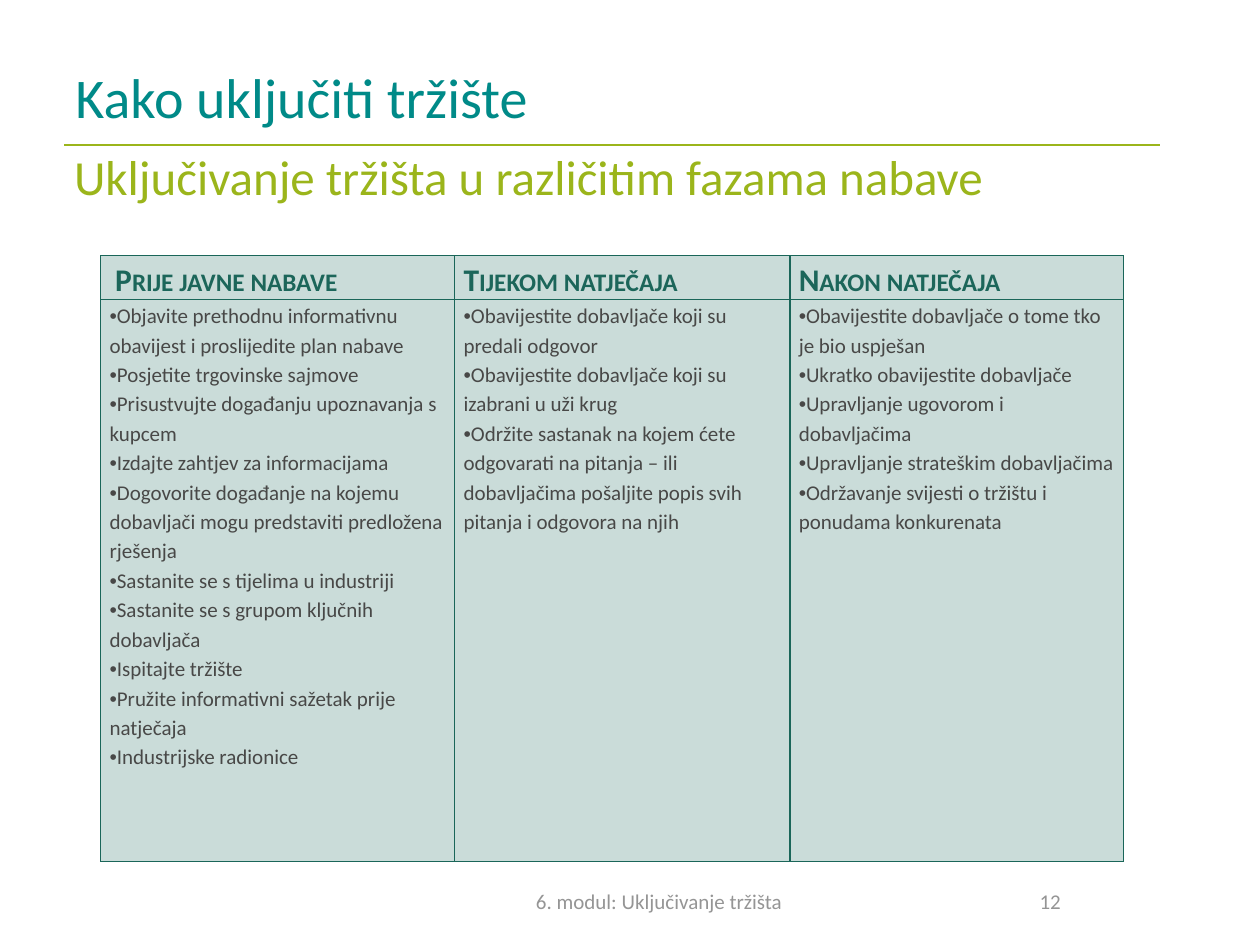
from dataclasses import dataclass

from lxml import etree
from pptx import Presentation
from pptx.dml.color import RGBColor
from pptx.enum.shapes import MSO_CONNECTOR
from pptx.enum.text import MSO_ANCHOR, PP_ALIGN
from pptx.oxml.ns import qn
from pptx.util import Inches, Pt

STRAIGHT = MSO_CONNECTOR.STRAIGHT
TOP, MIDDLE = MSO_ANCHOR.TOP, MSO_ANCHOR.MIDDLE
LEFT, CENTER = PP_ALIGN.LEFT, PP_ALIGN.CENTER


@dataclass(frozen=True)
class Theme:
    face: str = "Calibri"
    bullet_face: str = "Arial"
    teal: str = "008A88"
    lime: str = "9BB51B"
    grey: str = "959595"
    heading: str = "1C665A"
    body: str = "484847"
    border: str = "1A6659"
    cell: str = "CADCD9"
    title_size: int = 32
    subtitle_size: int = 28
    heading_size: int = 18
    small_size: int = 12
    rule_width: float = 0.75


THEME = Theme()

PHASES = {
    " Prije javne nabave": [
        "Objavite prethodnu informativnu obavijest i proslijedite plan nabave",
        "Posjetite trgovinske sajmove",
        "Prisustvujte događanju upoznavanja s kupcem",
        "Izdajte zahtjev za informacijama",
        "Dogovorite događanje na kojemu dobavljači mogu predstaviti predložena rješenja",
        "Sastanite se s tijelima u industriji",
        "Sastanite se s grupom ključnih dobavljača",
        "Ispitajte tržište",
        "Pružite informativni sažetak prije natječaja",
        "Industrijske radionice",
    ],
    "Tijekom natječaja": [
        "Obavijestite dobavljače koji su predali odgovor",
        "Obavijestite dobavljače koji su izabrani u uži krug",
        "Održite sastanak na kojem ćete odgovarati na pitanja – ili dobavljačima "
        "pošaljite popis svih pitanja i odgovora na njih",
    ],
    "Nakon natječaja": [
        "Obavijestite dobavljače o tome tko je bio uspješan",
        "Ukratko obavijestite dobavljače",
        "Upravljanje ugovorom i dobavljačima",
        "Upravljanje strateškim dobavljačima",
        "Održavanje svijesti o tržištu i ponudama konkurenata",
    ],
}


def apply_format(target, values):
    for name, value in values.items():
        setattr(target, name, value)


def style_font(font, size, color, bold=False):
    apply_format(font, {"name": THEME.face, "size": Pt(size), "bold": bold})
    font.color.rgb = RGBColor.from_string(color)


def add_label(slide, box, wording, size, color, align=LEFT, anchor=MIDDLE):
    frame = slide.shapes.add_textbox(*map(Inches, box)).text_frame
    apply_format(frame, {"word_wrap": True, "vertical_anchor": anchor})
    paragraph = frame.paragraphs[0]
    paragraph.alignment = align
    run = paragraph.add_run()
    run.text = wording
    style_font(run.font, size, color)


def add_rule(slide, left, right, y):
    rule = slide.shapes.add_connector(
        STRAIGHT, Inches(left), Inches(y), Inches(right), Inches(y))
    rule.line.color.rgb = RGBColor.from_string(THEME.lime)
    rule.line.width = Pt(THEME.rule_width)
    etree.SubElement(rule._element.spPr, qn("a:effectLst"))


def format_cell(cell):
    apply_format(cell, {
        "margin_left": Inches(0.07),
        "margin_right": Inches(0.07),
        "margin_top": 0,
        "margin_bottom": 0,
        "vertical_anchor": TOP,
    })
    cell.fill.solid()
    cell.fill.fore_color.rgb = RGBColor.from_string(THEME.cell)
    properties = cell._tc.get_or_add_tcPr()
    for position, side in enumerate(("lnL", "lnR", "lnT", "lnB")):
        border = etree.Element(qn(f"a:{side}"), w=str(Pt(THEME.rule_width)))
        paint = etree.SubElement(border, qn("a:solidFill"))
        etree.SubElement(paint, qn("a:srgbClr"), val=THEME.border)
        properties.insert(position, border)


def fill_heading(cell, phase):
    paragraph = cell.text_frame.paragraphs[0]
    paragraph.line_spacing = 1.15
    run = paragraph.add_run()
    run.text = phase
    style_font(run.font, THEME.heading_size, THEME.heading, bold=True)
    run._r.get_or_add_rPr().set("cap", "small")


def fill_activities(cell, activities):
    frame = cell.text_frame
    for index, activity in enumerate(activities):
        paragraph = frame.add_paragraph() if index else frame.paragraphs[0]
        paragraph.line_spacing = 1.15
        properties = paragraph._p.get_or_add_pPr()
        properties.set("marL", "0")
        properties.set("indent", str(-Inches(0.25)))
        etree.SubElement(properties, qn("a:buFont"), typeface=THEME.bullet_face)
        etree.SubElement(properties, qn("a:buChar"), char="•")
        run = paragraph.add_run()
        run.text = activity
        style_font(run.font, THEME.small_size, THEME.body)


def add_phase_table(slide):
    widths, heights = (2.81, 2.66, 2.65), (0.35, 4.46)
    table = slide.shapes.add_table(
        len(heights), len(widths), Inches(0.8), Inches(2.03),
        Inches(sum(widths)), Inches(sum(heights))).table
    apply_format(table, {"first_row": False, "horz_banding": False})
    for row, height in zip(table.rows, heights):
        row.height = Inches(height)
    for index, (phase, activities) in enumerate(PHASES.items()):
        table.columns[index].width = Inches(widths[index])
        heading, body = table.cell(0, index), table.cell(1, index)
        format_cell(heading)
        format_cell(body)
        fill_heading(heading, phase)
        fill_activities(body, activities)


def main():
    deck = Presentation()
    apply_format(deck, {"slide_width": Inches(10), "slide_height": Inches(7.5)})
    slide = deck.slides.add_slide(deck.slide_layouts[6])
    add_rule(slide, 0.51, 9.21, 1.15)
    add_label(slide, (2.87, 6.95, 4.72, 0.4), "6. modul: Uključivanje tržišta",
              THEME.small_size, THEME.grey, CENTER)
    add_label(slide, (7.17, 6.95, 2.33, 0.4), "12",
              THEME.small_size, THEME.grey, CENTER)
    add_label(slide, (0.5, 0.3, 8.75, 0.93), "Kako uključiti tržište",
              THEME.title_size, THEME.teal)
    add_label(slide, (0.49, 1.11, 8.74, 0.63),
              "Uključivanje tržišta u različitim fazama nabave",
              THEME.subtitle_size, THEME.lime, anchor=TOP)
    add_phase_table(slide)
    deck.save("out.pptx")


if __name__ == "__main__":
    main()
